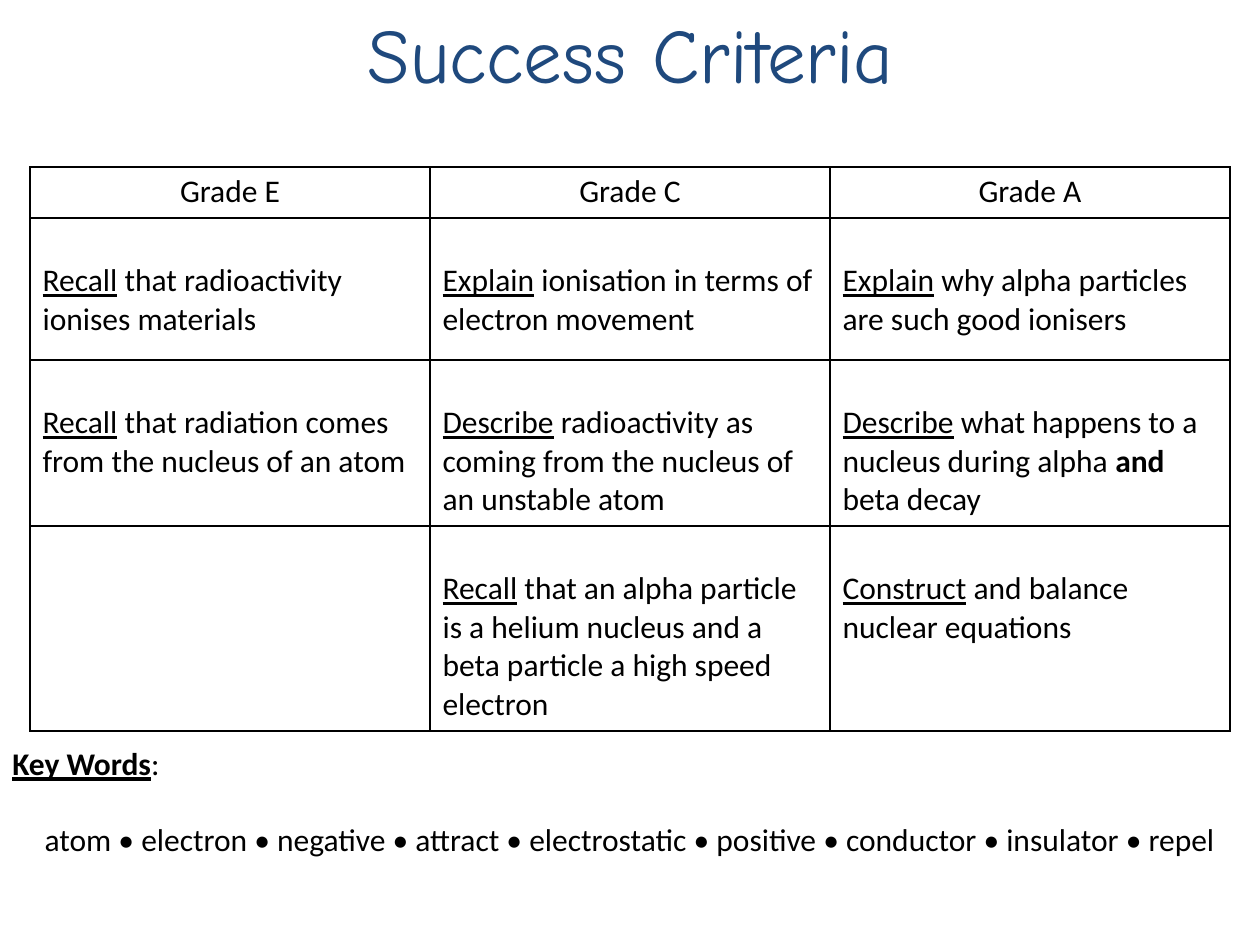
import lxml.etree
import pptx
import pptx.dml.color
import pptx.enum.text
import pptx.oxml.ns
import pptx.util

BLACK = pptx.dml.color.RGBColor(0, 0, 0)
NAVY = pptx.dml.color.RGBColor(0x1F, 0x49, 0x7D)
LEFT = pptx.enum.text.PP_ALIGN.LEFT
CENTER = pptx.enum.text.PP_ALIGN.CENTER
EMU_PER_PX = 914400 / 126
BLANK_LINE_PT = 22
CELL_MARGIN = 6
BLANK_LINE_MARGIN = 44

HEADINGS = ["Grade E", "Grade C", "Grade A"]
CRITERIA = [
    [
        [("Recall", "u"), (" that radioactivity ionises materials", "")],
        [("Explain", "u"), (" ionisation in terms of electron movement", "")],
        [("Explain", "u"), (" why alpha particles are such good ionisers", "")],
    ],
    [
        [("Recall", "u"), (" that radiation comes from the nucleus of an atom", "")],
        [("Describe", "u"), (" radioactivity as coming from the nucleus of an unstable atom", "")],
        [("Describe", "u"), (" what happens to a nucleus during alpha ", ""), ("and", "b"), (" beta decay", "")],
    ],
    [
        [],
        [("Recall", "u"), (" that an alpha particle is a helium nucleus and a beta particle a high speed electron", "")],
        [("Construct", "u"), (" and balance nuclear equations", "")],
    ],
]
KEY_WORDS = ["atom", "electron", "negative", "attract", "electrostatic",
             "positive", "conductor", "insulator", "repel"]


def px(length):
    return pptx.util.Emu(round(length * EMU_PER_PX))


class SlideBuilder:
    def __init__(self, slide):
        self.slide = slide
        self.font = "Calibri"
        self.size = 18
        self.color = BLACK

    def fill_paragraph(self, paragraph, runs, align=LEFT, font=None, size=None, color=None):
        paragraph.alignment = align
        paragraph.font.name = font or self.font
        paragraph.font.size = pptx.util.Pt(size or self.size)
        paragraph.font.color.rgb = color or self.color
        for text, emphasis in runs:
            run = paragraph.add_run()
            run.text = text
            if "b" in emphasis:
                run.font.bold = True
            if "u" in emphasis:
                run.font.underline = True

    def text_box(self, left, top, width, height):
        shape = self.slide.shapes.add_textbox(px(left), px(top), px(width), px(height))
        shape.text_frame.word_wrap = True
        return shape.text_frame

    def border(self, cell):
        properties = cell._tc.get_or_add_tcPr()
        for index, side in enumerate(["a:lnL", "a:lnR", "a:lnT", "a:lnB"]):
            line = lxml.etree.Element(pptx.oxml.ns.qn(side), w=str(pptx.util.Pt(1)))
            fill = lxml.etree.SubElement(line, pptx.oxml.ns.qn("a:solidFill"))
            lxml.etree.SubElement(fill, pptx.oxml.ns.qn("a:srgbClr"), val=str(self.color))
            properties.insert(index, line)

    def table(self, left, top, column_width, row_heights, rows):
        column_count = len(rows[0])
        frame = self.slide.shapes.add_table(
            len(rows), column_count, px(left), px(top),
            px(column_width * column_count), px(sum(row_heights)))
        table = frame.table
        table.first_row = False
        table.horz_banding = False
        for column in table.columns:
            column.width = px(column_width)
        for row_index, (height, row) in enumerate(zip(row_heights, rows)):
            table.rows[row_index].height = px(height)
            is_heading = row_index == 0
            for column_index, runs in enumerate(row):
                cell = table.cell(row_index, column_index)
                cell.fill.background()
                self.border(cell)
                cell.margin_top = px(CELL_MARGIN if is_heading else BLANK_LINE_MARGIN)
                self.fill_paragraph(cell.text_frame.paragraphs[0], runs, CENTER if is_heading else LEFT)


def main():
    presentation = pptx.Presentation()
    presentation.slide_width = px(1260)
    presentation.slide_height = px(945)
    builder = SlideBuilder(presentation.slides.add_slide(presentation.slide_layouts[6]))

    title = builder.text_box(64, 0, 1134, 157)
    builder.fill_paragraph(title.paragraphs[0], [("Success Criteria", "")], CENTER, "Comic Neue", 44, NAVY)

    heading_row = [[(heading, "")] for heading in HEADINGS]
    builder.table(30, 167, 400, [51, 142, 166, 205], [heading_row] + CRITERIA)

    key_words = builder.text_box(0, 738, 1260, 127)
    builder.fill_paragraph(key_words.paragraphs[0], [("Key Words", "bu"), (":", "")])
    word_list = key_words.add_paragraph()
    word_list.space_before = pptx.util.Pt(BLANK_LINE_PT)
    builder.fill_paragraph(word_list, [(" • ".join(KEY_WORDS), "")], CENTER)

    presentation.save("out.pptx")


if __name__ == "__main__":
    main()
